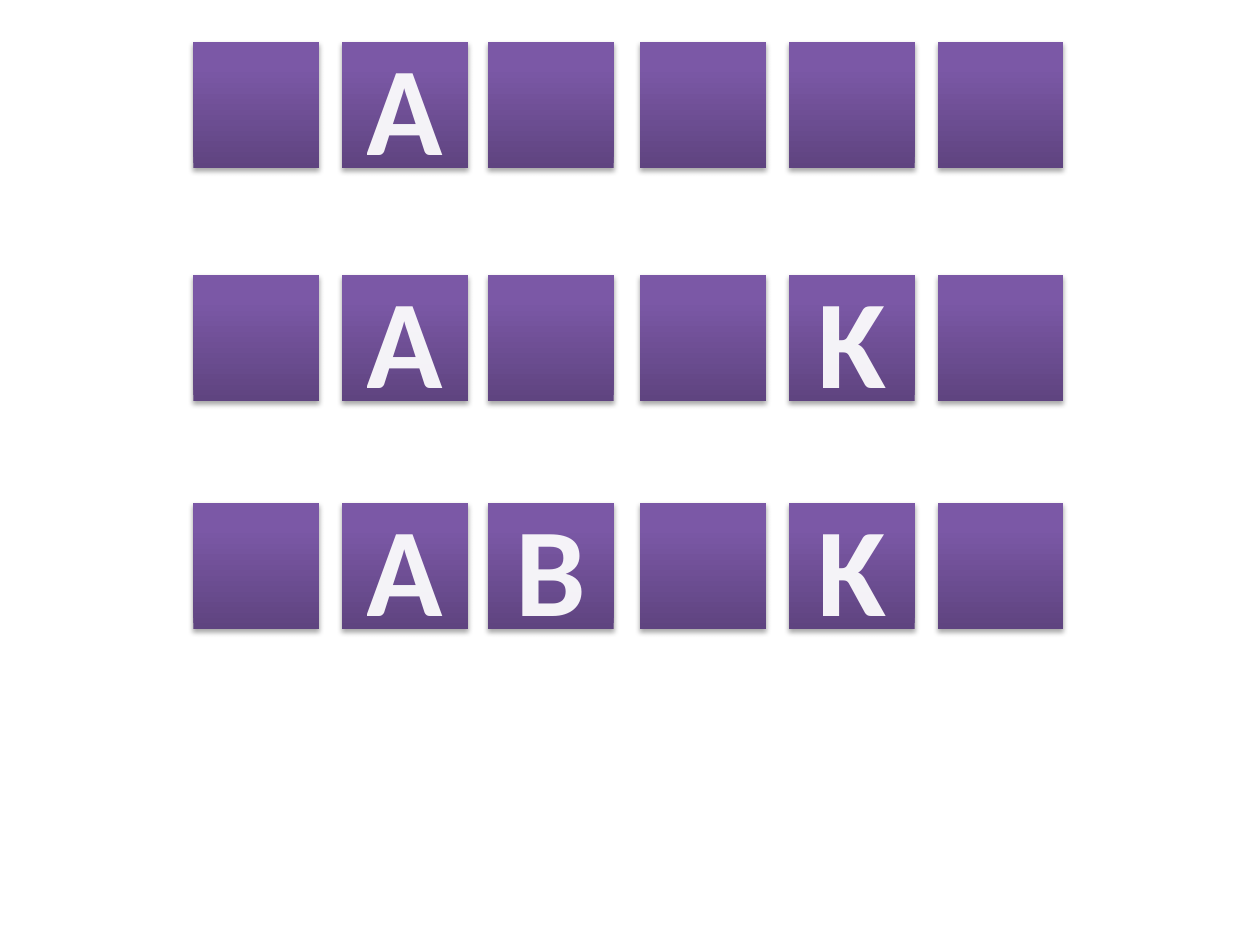
from lxml.etree import SubElement
from pptx import Presentation
from pptx.dml.color import RGBColor
from pptx.enum.shapes import MSO_SHAPE
from pptx.enum.text import MSO_ANCHOR, PP_ALIGN
from pptx.oxml.ns import qn
from pptx.util import Pt

WORD_ROWS = [" A    ", " A  K ", " AB K "]
COLUMN_LEFTS = [110.5, 195.5, 278.75, 365.75, 450.75, 535.75]
ROW_TOPS = [24, 157, 287.25]
TILE_SIZE = 72

THEME = {
    "gradient": [(0, "5F4480"), (80, "7B58A6"), (100, "7C57A8")],
    "gradient_angle": 270,
    "letter": "FCFCFD",
    "letter_opacity": 95,
    "outline": "101A26",
    "outline_opacity": 6,
    "outline_width": 1.06,
    "shadow": "000000",
    "shadow_opacity": 35,
    "font": {"name": "Calibri", "size": Pt(72), "bold": True},
}
FRAME_FORMAT = {"vertical_anchor": MSO_ANCHOR.MIDDLE, "word_wrap": True}


def apply_format(target, values):
    for name, value in values.items():
        setattr(target, name, value)


def add_element(parent, tag, **attributes):
    values = {name: str(value) for name, value in attributes.items()}
    return SubElement(parent, qn(tag), values)


def add_color(parent, color, opacity=100):
    element = add_element(parent, "a:srgbClr", val=color)
    if opacity < 100:
        add_element(element, "a:alpha", val=opacity * 1000)


def style_tile(shape):
    shape.line.fill.background()
    properties = shape._element.spPr
    gradient = add_element(properties, "a:gradFill", rotWithShape=1)
    stops = add_element(gradient, "a:gsLst")
    for position, color in THEME["gradient"]:
        add_color(add_element(stops, "a:gs", pos=position * 1000), color)
    add_element(gradient, "a:lin", ang=THEME["gradient_angle"] * 60000, scaled=0)
    properties.find(qn("a:ln")).addprevious(gradient)
    effects = add_element(properties, "a:effectLst")
    shadow = add_element(effects, "a:outerShdw", blurRad=Pt(3.1), dist=Pt(1.8),
                         dir=90 * 60000, rotWithShape=0)
    add_color(shadow, THEME["shadow"], THEME["shadow_opacity"])


def add_letter(shape, letter):
    apply_format(shape.text_frame, FRAME_FORMAT)
    paragraph = shape.text_frame.paragraphs[0]
    paragraph.alignment = PP_ALIGN.CENTER
    run = paragraph.add_run()
    run.text = letter
    apply_format(run.font, THEME["font"])
    run.font.color.rgb = RGBColor.from_string(THEME["letter"])
    properties = run._r.get_or_add_rPr()
    properties.set("spc", "50")
    fill = properties.find(qn("a:solidFill"))
    add_element(fill[0], "a:alpha", val=THEME["letter_opacity"] * 1000)
    outline = add_element(properties, "a:ln", w=Pt(THEME["outline_width"]))
    add_color(add_element(outline, "a:solidFill"), THEME["outline"], THEME["outline_opacity"])
    fill.addprevious(outline)


def main():
    presentation = Presentation()
    presentation.slide_width = Pt(720)
    presentation.slide_height = Pt(540)
    slide = presentation.slides.add_slide(presentation.slide_layouts[6])
    for top, letters in zip(ROW_TOPS, WORD_ROWS):
        for left, letter in zip(COLUMN_LEFTS, letters):
            shape = slide.shapes.add_shape(
                MSO_SHAPE.RECTANGLE, Pt(left), Pt(top), Pt(TILE_SIZE), Pt(TILE_SIZE))
            style_tile(shape)
            if letter.strip():
                add_letter(shape, letter)
    presentation.save("out.pptx")


if __name__ == "__main__":
    main()
